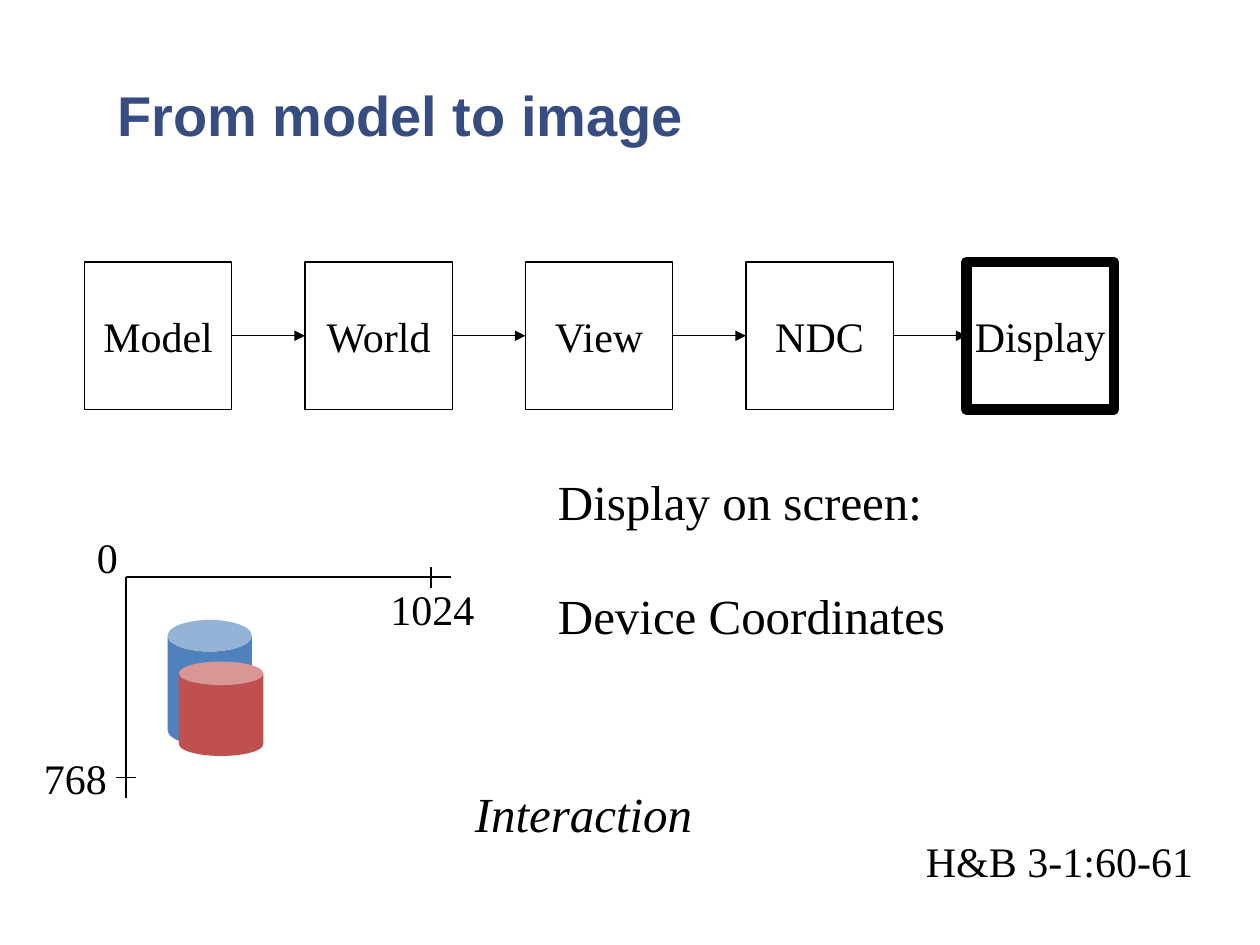
import pptx
import pptx.util
import pptx.dml.color
import pptx.enum.shapes
import pptx.enum.text
import pptx.oxml.ns
from lxml import etree

Inches, Pt = pptx.util.Inches, pptx.util.Pt
RGBColor = pptx.dml.color.RGBColor
SHAPE = pptx.enum.shapes.MSO_SHAPE
STRAIGHT = pptx.enum.shapes.MSO_CONNECTOR.STRAIGHT
MIDDLE = pptx.enum.text.MSO_ANCHOR.MIDDLE
CENTER = pptx.enum.text.PP_ALIGN.CENTER
AUTO_SIZE = pptx.enum.text.MSO_AUTO_SIZE.SHAPE_TO_FIT_TEXT
qn = pptx.oxml.ns.qn

BLACK = RGBColor(0x00, 0x00, 0x00)
NAVY = RGBColor(0x37, 0x4D, 0x81)
BLUE = RGBColor(0x4F, 0x81, 0xBD)
RED = RGBColor(0xC0, 0x50, 0x4D)

# Content
TITLE = "From model to image"
STAGES = ["Model", "World", "View", "NDC", "Display"]
CURRENT = "Display"
BODY = {"name": "Times New Roman", "size": Pt(24)}
LARGE = {**BODY, "size": Pt(28)}
HEADING = {"name": "Arial", "size": Pt(32), "bold": True}
LABELS = [  # paragraphs, (left, top, width, height), font
    (["Display on screen:", "Device Coordinates"], (4.33, 3.69, 3.27, 1.5), LARGE),
    (["768"], (0.25, 5.92, 0.7, 0.5), BODY),
    (["1024"], (3, 4.58, 0.87, 0.5), BODY),
    (["0"], (0.67, 4.17, 0.37, 0.5), BODY),
    (["Interaction"], (3.67, 6.17, 1.93, 0.57), {**LARGE, "italic": True}),
    (["H&B 3-1:60-61"], (7.25, 6.58, 2.32, 0.5), BODY),
]
AXES = [  # both axes, then their tick marks
    (1, 4.58, 1, 6.33),
    (1, 4.58, 3.58, 4.58),
    (3.42, 4.5, 3.42, 4.67),
    (1.08, 6.17, 0.92, 6.17),
]
CYLINDERS = [  # (left, top, width, height), lid adjustment, colour
    ((1.33, 4.92, 0.67, 1), 0.375, BLUE),
    ((1.42, 5.25, 0.67, 0.75), 0.28, RED),
]
STAGE_LEFT, STAGE_TOP, STAGE_SIDE, STAGE_PITCH = 0.67, 2.08, 1.17, 1.75
PARAGRAPH_GAP = Pt(32)


def write(tf, paragraphs, font, color=BLACK, align=None):
    for i, text in enumerate(paragraphs):
        p = tf.add_paragraph() if i else tf.paragraphs[0]
        p.alignment = align
        if i:
            p.space_before = PARAGRAPH_GAP
        r = p.add_run()
        r.text = text
        for key, value in font.items():
            setattr(r.font, key, value)
        r.font.color.rgb = color


def add_label(s, paragraphs, box, font):
    tf = s.shapes.add_textbox(*map(Inches, box)).text_frame
    tf.word_wrap = False
    tf.auto_size = AUTO_SIZE
    write(tf, paragraphs, font)


def add_line(s, x1, y1, x2, y2, arrow=False):
    line = s.shapes.add_connector(STRAIGHT, *map(Inches, (x1, y1, x2, y2)))
    line.line.color.rgb = BLACK
    line.line.width = Pt(0.75)
    if arrow:
        etree.SubElement(line.line._get_or_add_ln(), qn("a:tailEnd"), type="triangle")
    etree.SubElement(line._element.spPr, qn("a:effectLst"))
    return line


def add_stage(s, index, name):
    left = STAGE_LEFT + index * STAGE_PITCH
    sp = s.shapes.add_shape(
        SHAPE.RECTANGLE, *map(Inches, (left, STAGE_TOP, STAGE_SIDE, STAGE_SIDE)))
    sp.shadow.inherit = False
    sp.fill.background()
    sp.line.color.rgb = BLACK
    sp.line.width = Pt(6 if name == CURRENT else 0.75)
    tf = sp.text_frame
    tf.word_wrap = False
    tf.vertical_anchor = MIDDLE
    write(tf, [name], BODY, align=CENTER)
    return sp


def add_cylinder(s, box, adjustment, color):
    sp = s.shapes.add_shape(SHAPE.CAN, *map(Inches, box))
    sp.adjustments[0] = adjustment
    sp.shadow.inherit = False
    sp.fill.solid()
    sp.fill.fore_color.rgb = color
    sp.line.fill.background()


def main():
    prs = pptx.Presentation()
    prs.slide_width, prs.slide_height = Inches(10), Inches(7.5)
    s = prs.slides.add_slide(prs.slide_layouts[6])

    # Title
    tf = s.shapes.add_textbox(*map(Inches, (0.93, 0.64, 8.13, 0.54))).text_frame
    tf.word_wrap = True
    tf.auto_size = AUTO_SIZE
    for side in ("left", "top", "right", "bottom"):
        setattr(tf, f"margin_{side}", 0)
    write(tf, [TITLE], HEADING, NAVY)

    # Pipeline of coordinate systems
    stages = [add_stage(s, i, name) for i, name in enumerate(STAGES)]
    for start, end in zip(stages, stages[1:]):
        arrow = add_line(s, 0, 0, 1, 0, arrow=True)
        arrow.begin_connect(start, 3)
        arrow.end_connect(end, 1)

    # Screen axes and the objects drawn on them
    for ends in AXES:
        add_line(s, *ends)
    for cylinder in CYLINDERS:
        add_cylinder(s, *cylinder)

    # Labels and remarks
    for label in LABELS:
        add_label(s, *label)

    prs.save("out.pptx")


if __name__ == "__main__":
    main()
